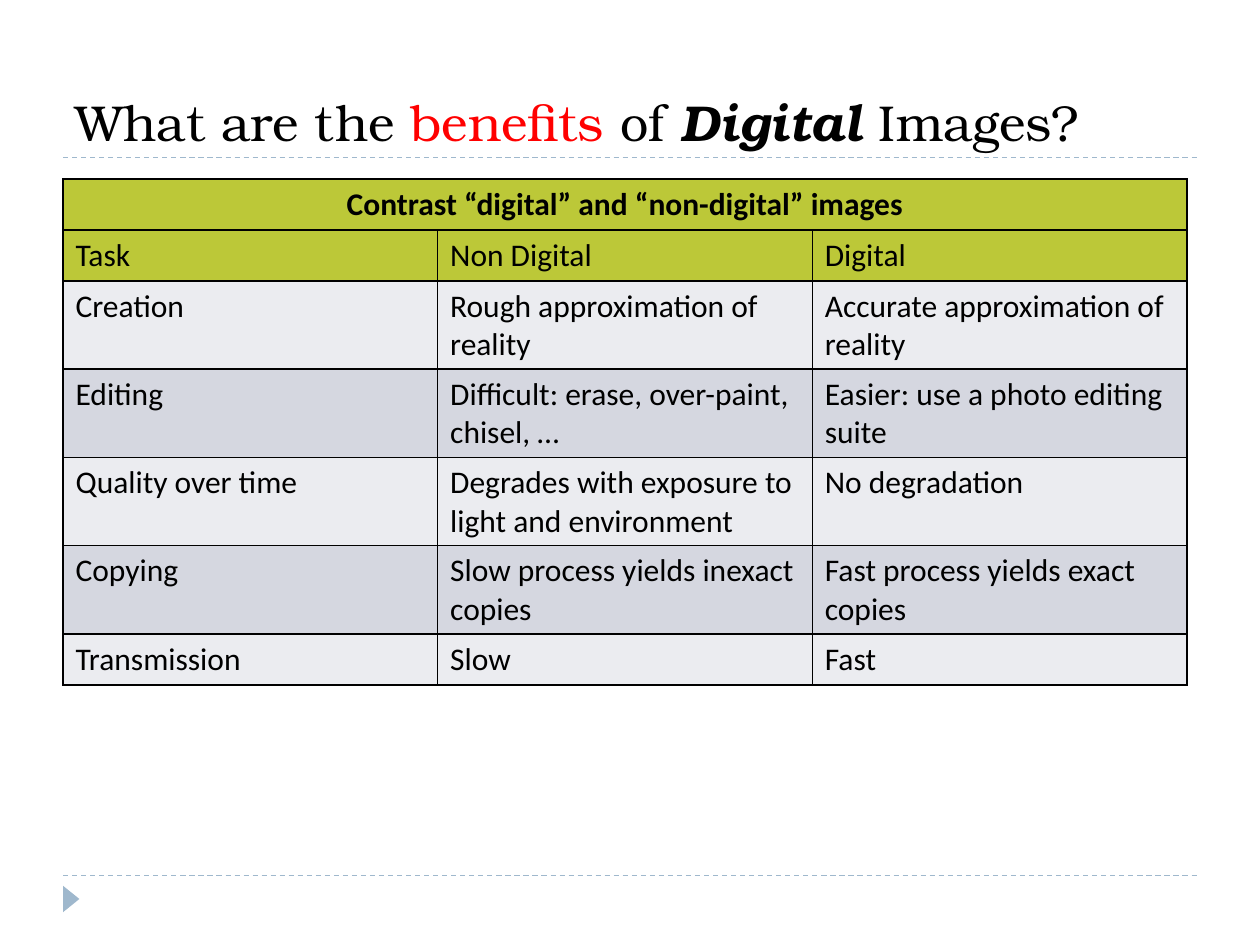
import pptx
import pptx.dml.color
import pptx.enum.dml
import pptx.enum.shapes
import pptx.enum.text
import pptx.oxml
import pptx.oxml.ns
import pptx.util
from lxml import etree


def color(value):
    """Turn a hex string into a colour."""
    return pptx.dml.color.RGBColor.from_string(value)


class Deck:
    """Style and current slide, placed on a grid of half-inch columns and rows."""

    cell = 0.5
    ink, accent, red = "000000", "9FB8CD", "FF0000"
    header, bands = "BCC838", ("EBECF0", "D5D7E0")
    title_font, body_font = "TeX Gyre Bonum", "Calibri"

    def __init__(self, columns, rows):
        self.file = pptx.Presentation()
        self.file.slide_width, self.file.slide_height = self.grid(columns, rows)
        self.slide = self.file.slides.add_slide(self.file.slide_layouts[6])

    def grid(self, *units):
        return [pptx.util.Inches(unit * self.cell) for unit in units]

    def add_words(self, paragraph, words, font, size, ink=ink, bold=False, italic=False):
        run = paragraph.add_run()
        run.text = words
        run.font.name, run.font.size = font, pptx.util.Pt(size)
        run.font.bold, run.font.italic = bold, italic
        run.font.color.rgb = color(ink)

    def rule(self, left, right, row):
        rule = self.slide.shapes.add_connector(
            pptx.enum.shapes.MSO_CONNECTOR.STRAIGHT, *self.grid(left, row, right, row))
        rule.line.color.rgb = color(self.accent)
        rule.line.width = pptx.util.Pt(0.75)
        rule.line.dash_style = pptx.enum.dml.MSO_LINE.DASH
        etree.SubElement(rule._element.spPr, pptx.oxml.ns.qn("a:effectLst"))

    def marker(self, *place):
        marker = self.slide.shapes.add_shape(
            pptx.enum.shapes.MSO_SHAPE.ISOSCELES_TRIANGLE, *self.grid(*place))
        marker.rotation = 90
        marker.shadow.inherit = False
        marker.fill.solid()
        marker.fill.fore_color.rgb = color(self.accent)
        marker.line.fill.background()

    def title(self, place, pieces):
        frame = self.slide.shapes.add_textbox(*self.grid(*place)).text_frame
        frame.word_wrap = True
        frame.vertical_anchor = pptx.enum.text.MSO_ANCHOR.BOTTOM
        for words, style in pieces:
            self.add_words(frame.paragraphs[0], words, self.title_font, 28.8, **style)

    def border(self, cell):
        properties = cell._tc.get_or_add_tcPr()
        for position, side in enumerate(("lnL", "lnR", "lnT", "lnB")):
            properties.insert(position, pptx.oxml.parse_xml(
                f'<a:{side} {pptx.oxml.ns.nsdecls("a")} w="12700"><a:solidFill>'
                f'<a:srgbClr val="{self.ink}"/></a:solidFill></a:{side}>'))

    def table(self, place, row_height, heading, rows):
        table = self.slide.shapes.add_table(
            len(rows) + 1, len(rows[0]), *self.grid(*place)).table
        table.cell(0, 0).merge(table.cell(0, len(rows[0]) - 1))
        spread = [[heading] + [""] * (len(rows[0]) - 1)] + rows
        for r, texts in enumerate(spread):
            table.rows[r].height = self.grid(row_height)[0]
            for c, words in enumerate(texts):
                cell = table.cell(r, c)
                cell.fill.solid()
                cell.fill.fore_color.rgb = color(self.header if r < 2 else self.bands[r % 2])
                self.border(cell)
                if words:
                    paragraph = cell.text_frame.paragraphs[0]
                    if r == 0:
                        paragraph.alignment = pptx.enum.text.PP_ALIGN.CENTER
                    self.add_words(paragraph, words, self.body_font, 18, bold=r == 0)


def main():
    deck = Deck(20, 15)
    for row in (13.9, 2.5):
        deck.rule(1, 19, row)
    deck.marker(0.92, 14.14, 0.42, 0.26)
    deck.title((1, 0.34, 18, 2.16), [
        ("What are the ", {}),
        ("benefits", {"ink": deck.red}),
        (" of ", {}),
        ("Digital", {"bold": True, "italic": True}),
        (" Images?", {}),
    ])
    deck.table((1, 2.84, 17.84, 8.04), 0.81, "Contrast “digital” and “non-digital” images", [
        ["Task", "Non Digital", "Digital"],
        ["Creation", "Rough approximation of reality", "Accurate approximation of reality"],
        ["Editing", "Difficult: erase, over-paint, chisel, …", "Easier: use a photo editing suite"],
        ["Quality over time", "Degrades with exposure to light and environment", "No degradation"],
        ["Copying", "Slow process yields inexact copies", "Fast process yields exact copies"],
        ["Transmission", "Slow", "Fast"],
    ])
    deck.file.save("out.pptx")


if __name__ == "__main__":
    main()
